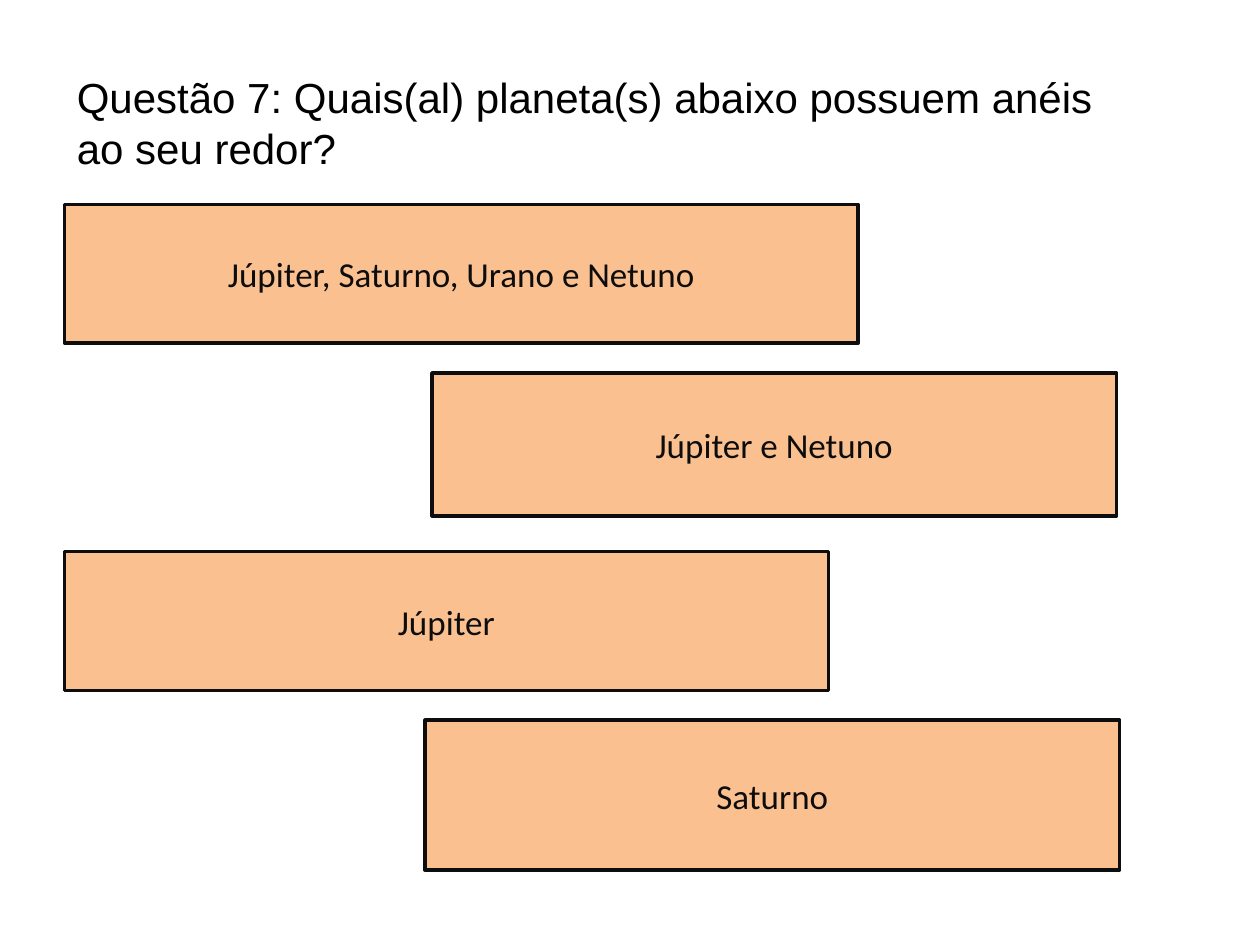
from dataclasses import dataclass

from pptx import Presentation
from pptx.dml.color import RGBColor
from pptx.enum.shapes import MSO_SHAPE
from pptx.enum.text import MSO_ANCHOR, MSO_AUTO_SIZE, PP_ALIGN
from pptx.util import Cm, Pt

RECT = MSO_SHAPE.RECTANGLE
MIDDLE = MSO_ANCHOR.MIDDLE
CENTER = PP_ALIGN.CENTER
GROW = MSO_AUTO_SIZE.SHAPE_TO_FIT_TEXT


@dataclass(frozen=True)
class Theme:
    black: RGBColor = RGBColor(0, 0, 0)
    ink: RGBColor = RGBColor(0x0D, 0x0D, 0x0D)
    peach: RGBColor = RGBColor(0xFA, 0xC0, 0x90)
    head: str = "Arial"
    body: str = "Calibri"
    large: Pt = Pt(24)
    small: Pt = Pt(20)
    edge: Pt = Pt(2)


THEME = Theme()


def set_font(par, name, size, color):
    par.font.name = name
    par.font.size = size
    par.font.color.rgb = color


def add_title(slide, box, text):
    frame = slide.shapes.add_textbox(*map(Cm, box)).text_frame
    frame.word_wrap = True
    frame.auto_size = GROW
    par = frame.paragraphs[0]
    par.text = text
    set_font(par, THEME.head, THEME.large, THEME.black)


def add_answer(slide, box, text):
    card = slide.shapes.add_shape(RECT, *map(Cm, box))
    card.shadow.inherit = False
    card.fill.solid()
    card.fill.fore_color.rgb = THEME.peach
    card.line.color.rgb = THEME.ink
    card.line.width = THEME.edge
    frame = card.text_frame
    frame.word_wrap = True
    frame.vertical_anchor = MIDDLE
    par = frame.paragraphs[0]
    par.text = text
    par.alignment = CENTER
    set_font(par, THEME.body, THEME.small, THEME.ink)


def add_quiz(slide, box, answers):
    left, top, _, _ = box
    for text, (x, y, wide, high) in answers:
        add_answer(slide, (left + x, top + y, wide, high), text)


def main():
    deck = Presentation()
    deck.slide_width, deck.slide_height = Cm(25.4), Cm(19.05)
    slide = deck.slides.add_slide(deck.slide_layouts[6])
    add_title(slide, (1.3, 1.32, 21.21, 2.31),
              "Questão 7: Quais(al) planeta(s) abaixo possuem anéis ao seu redor?")
    answers = [
        ("Júpiter, Saturno, Urano e Netuno", (0, 0, 16, 2.8)),
        ("Júpiter e Netuno", (7.41, 3.4, 13.8, 2.88)),
        ("Júpiter", (0, 7, 15.4, 2.8)),
        ("Saturno", (7.27, 10.4, 14, 3.02)),
    ]
    add_quiz(slide, (1.3, 4.12, 21.27, 13.42), answers)
    deck.save("out.pptx")


if __name__ == "__main__":
    main()
